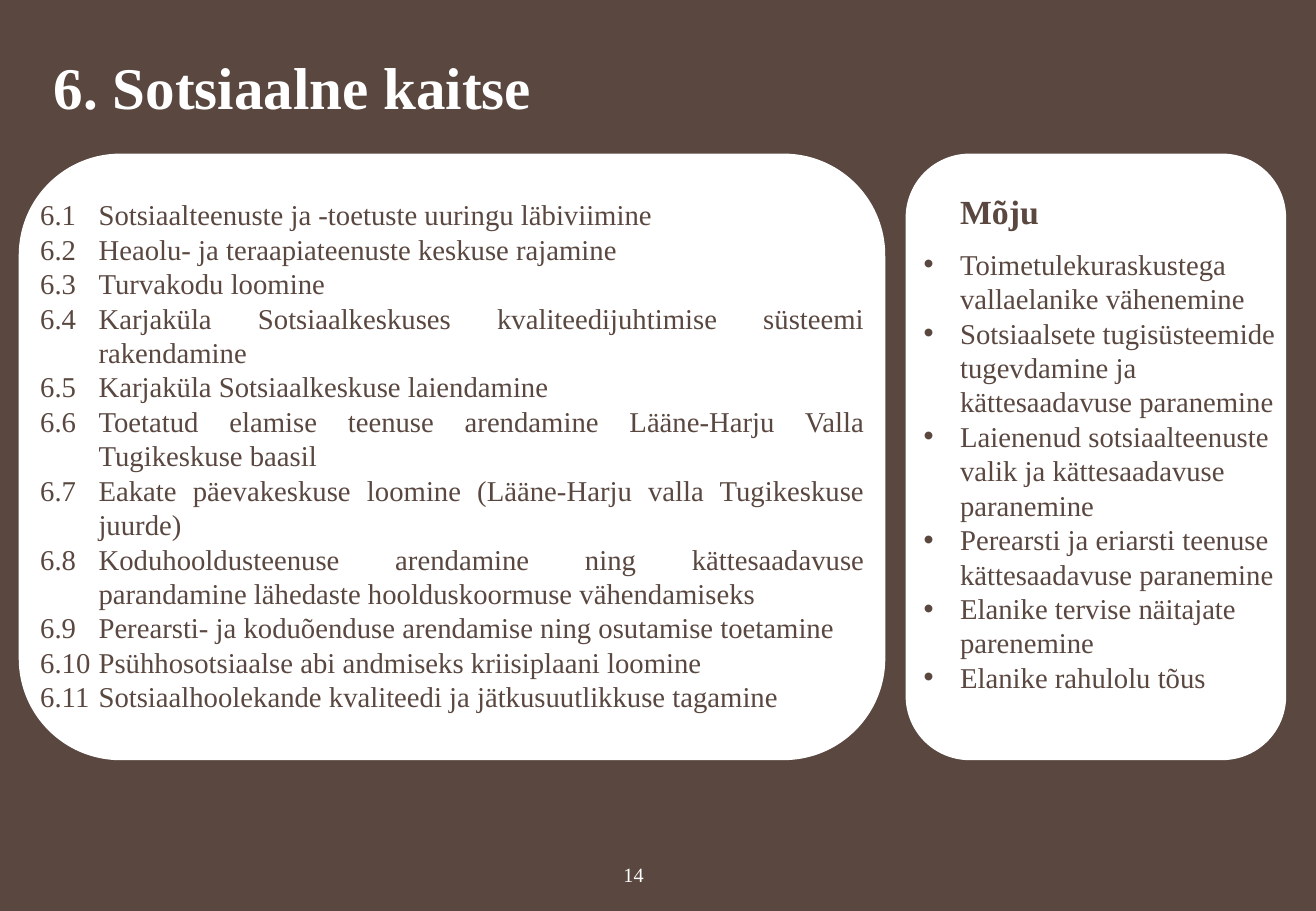
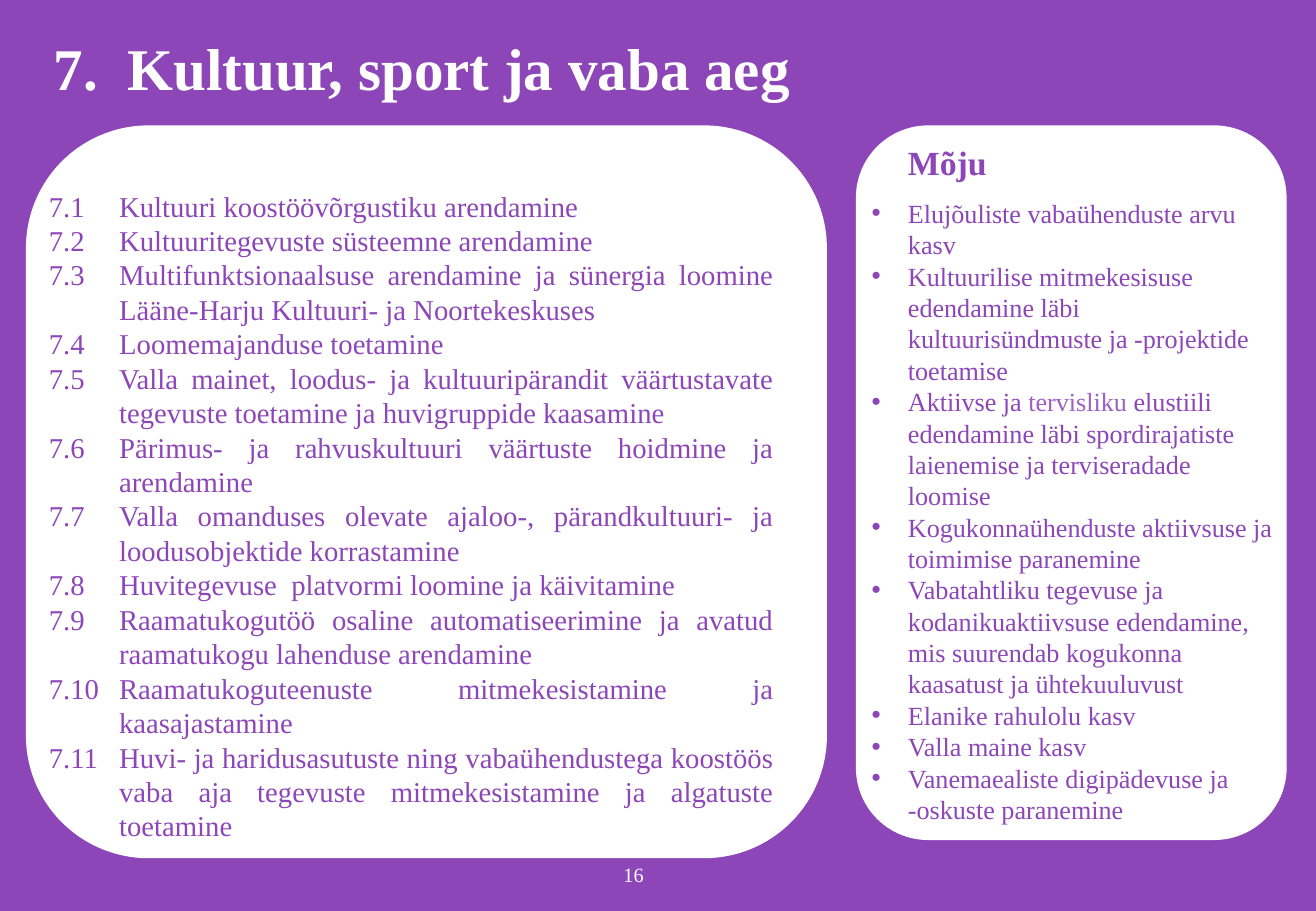
from lxml.etree import SubElement
from pptx import Presentation
from pptx.dml.color import RGBColor
from pptx.enum.shapes import MSO_SHAPE
from pptx.enum.text import MSO_ANCHOR, MSO_AUTO_SIZE, PP_ALIGN
from pptx.oxml.ns import qn
from pptx.util import Cm, Pt

# Shared style
HUES = {"white": "FFFFFF", "brown": "594740", "purple": "8D46B8", "pale": "9E61C3"}
FONT = "Times New Roman"
LEFT, CENTER, JUST = PP_ALIGN.LEFT, PP_ALIGN.CENTER, PP_ALIGN.JUSTIFY
INSET = 0.13
TEXT_IN, DOT_IN = 0.99, 0.76  # text indent and bullet hang, cm

# Content; boxes are (left, top, width, height) in cm
PAGES = [
    {
        "hue": "brown", "num": 6, "page": "14", "top": 1.12,
        "title": "6. Sotsiaalne kaitse",
        "cards": [(0.41, 3.23, 18.08, 12.65), (18.95, 3.23, 7.92, 12.65)],
        "boxes": [(0.71, 3.99, 17.5, 11.05), (18.95, 3.86, 7.92, 10.74)],
        "hang": 1.22, "size": 17,
        "tasks": [
            "Sotsiaalteenuste ja -toetuste uuringu läbiviimine",
            "Heaolu- ja teraapiateenuste keskuse rajamine",
            "Turvakodu loomine",
            "Karjaküla Sotsiaalkeskuses kvaliteedijuhtimise süsteemi rakendamine",
            "Karjaküla Sotsiaalkeskuse laiendamine",
            "Toetatud elamise teenuse arendamine Lääne-Harju Valla Tugikeskuse baasil",
            "Eakate päevakeskuse loomine (Lääne-Harju valla Tugikeskuse juurde)",
            "Koduhooldusteenuse arendamine ning kättesaadavuse parandamine "
            "lähedaste hoolduskoormuse vähendamiseks",
            "Perearsti- ja koduõenduse arendamise ning osutamise toetamine",
            "Psühhosotsiaalse abi andmiseks kriisiplaani loomine",
            "Sotsiaalhoolekande kvaliteedi ja jätkusuutlikkuse tagamine",
        ],
        "gains": [
            "Toimetulekuraskustega vallaelanike vähenemine",
            "Sotsiaalsete tugisüsteemide tugevdamine ja kättesaadavuse paranemine",
            "Laienenud sotsiaalteenuste valik ja kättesaadavuse paranemine",
            "Perearsti ja eriarsti teenuse kättesaadavuse paranemine",
            "Elanike tervise näitajate parenemine",
            "Elanike rahulolu tõus",
        ],
    },
    {
        "hue": "purple", "num": 7, "page": "16", "top": 0.74,
        "title": "7.  Kultuur, sport ja vaba aeg",
        "cards": [(0.56, 2.64, 16.71, 15.29), (17.91, 2.64, 8.97, 14.91)],
        "boxes": [(0.89, 3.81, 15.42, 13.92), (17.86, 2.83, 8.97, 14.5)],
        "hang": 1.47, "size": 15.5,
        "tasks": [
            "Kultuuri koostöövõrgustiku arendamine",
            "Kultuuritegevuste süsteemne arendamine",
            "Multifunktsionaalsuse arendamine ja sünergia loomine "
            "Lääne-Harju Kultuuri- ja Noortekeskuses",
            "Loomemajanduse toetamine",
            "Valla mainet, loodus- ja kultuuripärandit väärtustavate "
            "tegevuste toetamine ja huvigruppide kaasamine",
            "Pärimus- ja rahvuskultuuri väärtuste hoidmine ja arendamine",
            "Valla omanduses olevate ajaloo-, pärandkultuuri- ja "
            "loodusobjektide korrastamine",
            "Huvitegevuse  platvormi loomine ja käivitamine",
            "Raamatukogutöö osaline automatiseerimine ja avatud "
            "raamatukogu lahenduse arendamine",
            "Raamatukoguteenuste mitmekesistamine ja kaasajastamine",
            "Huvi- ja haridusasutuste ning vabaühendustega koostöös "
            "vaba aja tegevuste mitmekesistamine ja algatuste toetamine",
        ],
        "gains": [
            "Elujõuliste vabaühenduste arvu kasv",
            "Kultuurilise mitmekesisuse edendamine läbi "
            "kultuurisündmuste ja -projektide toetamise",
            # every second piece is pale
            ("Aktiivse ja ", "tervisliku", " elustiili edendamine läbi "
             "spordirajatiste laienemise ja terviseradade loomise"),
            "Kogukonnaühenduste aktiivsuse ja toimimise paranemine",
            "Vabatahtliku tegevuse ja kodanikuaktiivsuse edendamine, "
            "mis suurendab kogukonna kaasatust ja ühtekuuluvust",
            "Elanike rahulolu kasv",
            "Valla maine kasv",
            "Vanemaealiste digipädevuse ja -oskuste paranemine",
        ],
    },
]


def paint(fill, hue):
    fill.solid()
    fill.fore_color.rgb = RGBColor.from_string(HUES[hue])


def place(shape, box, anchor=MSO_ANCHOR.TOP, wrap=True):
    """Move a text shape and return its frame."""
    shape.left, shape.top, shape.width, shape.height = map(Cm, box)
    frame = shape.text_frame
    frame.auto_size = MSO_AUTO_SIZE.NONE
    frame.word_wrap, frame.vertical_anchor = wrap, anchor
    frame.margin_left = frame.margin_right = Cm(INSET)
    frame.margin_top = frame.margin_bottom = Cm(INSET)
    return frame


def write(frame, text, hue="white", size=17, bold=False, align=LEFT,
          inset=0, hang=0, dot=False, after=0, line=1.0):
    """Add one paragraph; a tuple of pieces alternates with pale."""
    para = frame.paragraphs[0]
    if para.runs:
        para = frame.add_paragraph()
    para.alignment, para.line_spacing = align, line
    para.space_before, para.space_after = Pt(0), Pt(after)
    props = para._p.get_or_add_pPr()
    props.set("marL", str(Cm(inset)))
    props.set("indent", str(-Cm(hang)))
    if dot:
        SubElement(props, qn("a:buFont")).set("typeface", "Arial")
        SubElement(props, qn("a:buChar")).set("char", "•")
    else:
        SubElement(props, qn("a:buNone"))
    for i, piece in enumerate([text] if isinstance(text, str) else text):
        run = para.add_run()
        run.text = piece
        font = run.font
        font.name, font.size, font.bold = FONT, Pt(size), bold
        font.color.rgb = RGBColor.from_string(HUES["pale" if i % 2 else hue])


def add_card(slide, box):
    card = slide.shapes.add_shape(MSO_SHAPE.ROUNDED_RECTANGLE, *map(Cm, box))
    card.shadow.inherit = False
    paint(card.fill, "white")
    paint(card.line.fill, "white")
    card.line.width = Pt(1)
    slide.shapes._spTree.insert(2, card._element)  # behind the text


def build(deck, data):
    slide = deck.slides.add_slide(deck.slide_layouts[3])
    hue = data["hue"]
    paint(slide.background.fill, hue)
    for box in data["cards"]:
        add_card(slide, box)

    # Title
    frame = place(slide.shapes.title, (0.99, data["top"], 25.02, 1.52),
                  MSO_ANCHOR.MIDDLE)
    write(frame, data["title"], size=35, bold=True, line=0.9)

    # Numbered tasks
    tasks, gains = (place(slide.placeholders[i], box)
                    for i, box in enumerate(data["boxes"], 1))
    for i, text in enumerate(data["tasks"], 1):
        write(tasks, f"{data['num']}.{i}\t{text}", hue=hue, align=JUST,
              inset=data["hang"], hang=data["hang"])

    # Impact list
    write(gains, "Mõju", hue=hue, size=20, bold=True, inset=TEXT_IN, after=9)
    for text in data["gains"]:
        write(gains, text, hue=hue, size=data["size"], inset=TEXT_IN,
              hang=DOT_IN, dot=True)

    # Page number
    box = (12.9, 17.91, 0.69, 0.76)
    note = slide.shapes.add_textbox(*map(Cm, box))
    write(place(note, box, MSO_ANCHOR.MIDDLE, wrap=False), data["page"],
          size=12, align=CENTER)


def main():
    deck = Presentation()
    deck.slide_width, deck.slide_height = Cm(27.51), Cm(19.05)
    for data in PAGES:
        build(deck, data)
    deck.save("out.pptx")


if __name__ == "__main__":
    main()
